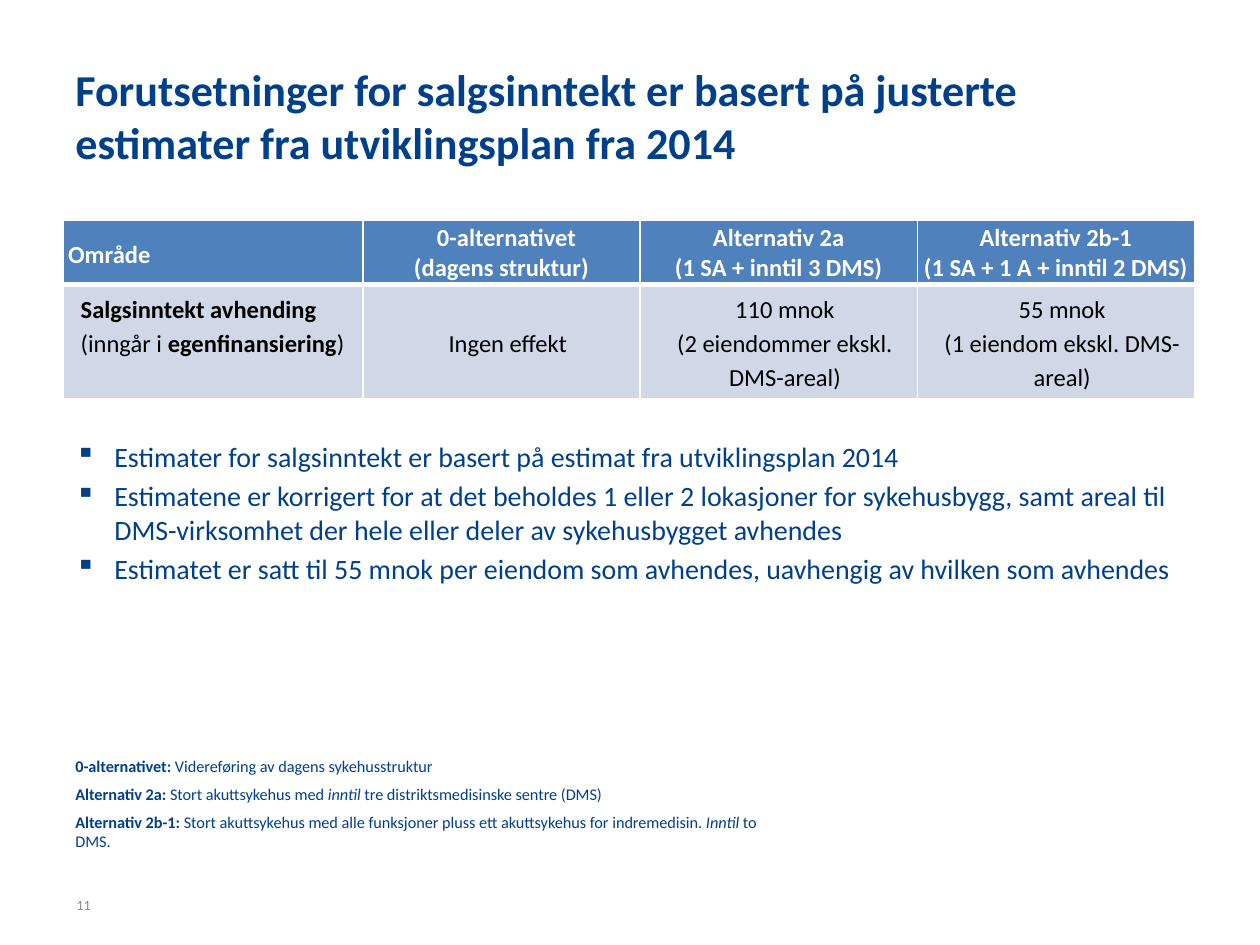
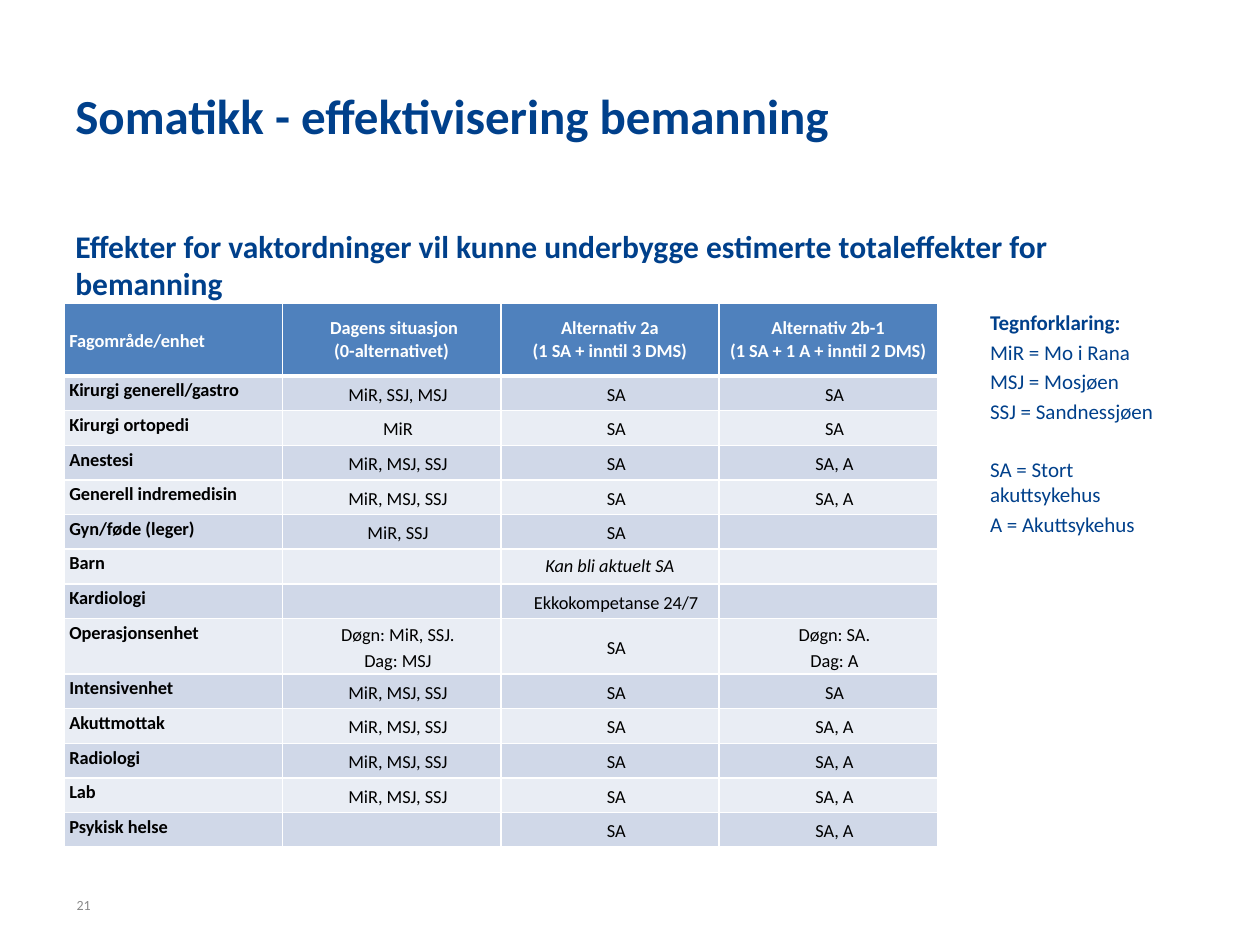
from dataclasses import dataclass, replace
from typing import NamedTuple

from lxml import etree
from pptx import Presentation
from pptx import util as u
from pptx.dml.color import RGBColor
from pptx.enum import text
from pptx.oxml import ns

COLORS = {
    "navy": "00408B",
    "gray": "898989",
    "header": "4F81BD",
    "band_dark": "D0D8E8",
    "band_light": "E9EDF4",
    "white": "FFFFFF",
    "black": "000000",
}
FONT = "Calibri"
COLUMN = u.Inches(0.5)
ROW = u.Inches(0.25)
LEFT, CENTER = text.PP_ALIGN.LEFT, text.PP_ALIGN.CENTER
TOP, MIDDLE = text.MSO_ANCHOR.TOP, text.MSO_ANCHOR.MIDDLE


class Area(NamedTuple):
    """A place on the grid, in columns and rows."""
    left: float
    top: float
    width: float
    height: float

    def emu(self) -> tuple[int, ...]:
        units = (COLUMN, ROW, COLUMN, ROW)
        return tuple(round(part * unit) for part, unit in zip(self, units))


class Run(NamedTuple):
    words: str
    bold: bool = False
    italic: bool = False


class Style(NamedTuple):
    size: float
    color: str = "navy"


@dataclass(frozen=True)
class Para:
    content: str | tuple[Run, ...]
    bold: bool = False
    italic: bool = False
    align: text.PP_ALIGN = LEFT
    indent: float = 0  # inches
    bullet: str = ""
    spacing: float = 1.0
    before: float = 0  # points
    after: float = 0


@dataclass(frozen=True)
class Grid:
    area: Area
    widths: list[float]
    heights: list[float]
    size: float
    header: list[list[Para]]
    body: list[list[list[Para]]]
    inset: tuple[float, float]  # body cells, inches
    label_inset: tuple[float, float]


TITLE = Area(1, 2.08, 18, 3.16)
PAGE_NUMBER = Area(1.02, 27.92, 4.66, 1.6)


def fill_paragraph(paragraph, para: Para, style: Style) -> None:
    properties = paragraph._p.get_or_add_pPr()
    if para.indent:
        properties.set("marL", str(u.Inches(para.indent)))
    if para.bullet:
        properties.set("indent", str(-u.Inches(para.indent)))
        mark = etree.SubElement(properties, ns.qn("a:buChar"))
        mark.set("char", para.bullet)
    paragraph.alignment = para.align
    paragraph.line_spacing = para.spacing
    paragraph.space_before = u.Pt(para.before)
    paragraph.space_after = u.Pt(para.after)
    font = paragraph.font
    font.name, font.size = FONT, u.Pt(style.size)
    font.color.rgb = RGBColor.from_string(COLORS[style.color])

    if isinstance(para.content, str):
        font.bold, font.italic = para.bold, para.italic
        if para.content:
            paragraph.add_run().text = para.content
        else:
            end = paragraph._p.get_or_add_endParaRPr()
            end.set("sz", str(round(style.size * 100)))
        return
    for part in para.content:
        run = paragraph.add_run()
        run.text = part.words
        run.font.bold, run.font.italic = part.bold, part.italic


def fill_frame(frame, paras: list[Para], style: Style) -> None:
    for index, para in enumerate(paras):
        paragraph = frame.add_paragraph() if index else frame.paragraphs[0]
        fill_paragraph(paragraph, para, style)


def add_text(slide, area: Area, paras: list[Para], style: Style, anchor=TOP) -> None:
    frame = slide.shapes.add_textbox(*area.emu()).text_frame
    frame.word_wrap = True
    frame.vertical_anchor = anchor
    fill_frame(frame, paras, style)


def add_border(cell, side: str, points: float) -> None:
    line = etree.SubElement(cell._tc.get_or_add_tcPr(), ns.qn(f"a:ln{side}"))
    line.set("w", str(u.Pt(points)))
    fill = etree.SubElement(line, ns.qn("a:solidFill"))
    etree.SubElement(fill, ns.qn("a:srgbClr")).set("val", COLORS["white"])


def format_cell(cell, row: int, inset: tuple[float, float], anchor) -> None:
    heavy_side = {0: "B", 1: "T"}.get(row)
    for side in "LRTB":
        add_border(cell, side, 3 if side == heavy_side else 1)
    band = "header" if row == 0 else "band_dark" if row % 2 else "band_light"
    cell.fill.solid()
    cell.fill.fore_color.rgb = RGBColor.from_string(COLORS[band])
    cell.margin_left = cell.margin_right = u.Inches(inset[0])
    cell.margin_top = cell.margin_bottom = u.Inches(inset[1])
    cell.vertical_anchor = anchor


def add_grid(slide, grid: Grid) -> None:
    rows = [grid.header, *grid.body]
    table = slide.shapes.add_table(
        len(rows), len(grid.widths), *grid.area.emu()).table
    for column, width in zip(table.columns, grid.widths):
        column.width = round(width * COLUMN)
    for table_row, height in zip(table.rows, grid.heights):
        table_row.height = round(height * ROW)
    for r, contents in enumerate(rows):
        for c, paras in enumerate(contents):
            cell = table.cell(r, c)
            if r == 0:
                inset, anchor = (0, 0.02 if c else 0), MIDDLE
            elif c == 0:
                inset, anchor = grid.label_inset, TOP
            else:
                inset, anchor = grid.inset, MIDDLE
            format_cell(cell, r, inset, anchor)
            fill_frame(cell.text_frame, paras,
                       Style(grid.size, "black" if r else "white"))


def header_cells(label: str, today: tuple[str, str], today_indent: float) -> list[list[Para]]:
    heading = Para("", bold=True, align=CENTER)
    options = [("Alternativ 2a", "(1 SA + inntil 3 DMS)"),
               ("Alternativ 2b-1", "(1 SA + 1 A + inntil 2 DMS)")]
    return [
        [Para(label, bold=True, indent=0.04, spacing=1.15)],
        [replace(heading, content=today[0], indent=today_indent),
         replace(heading, content=today[1])],
        *[[replace(heading, content=line) for line in option] for option in options],
    ]


def label_cell(*contents: str | tuple[Run, ...]) -> list[Para]:
    return [Para(content, bold=True, indent=0.04, spacing=1.15) for content in contents]


def value_cell(lines: str) -> list[Para]:
    return [Para(line, align=CENTER, indent=0.1, spacing=1.15)
            for line in lines.split("\n")]


def start_slide(deck, title: str, title_size: float, page: str):
    slide = deck.slides.add_slide(deck.slide_layouts[6])
    add_text(slide, TITLE, [Para(title, bold=True)], Style(title_size), MIDDLE)
    add_text(slide, PAGE_NUMBER, [Para(page)], Style(8, "gray"), MIDDLE)
    return slide


def spaced(paras: list[Para], before: float) -> list[Para]:
    """Put the same space before every paragraph but the first."""
    return paras[:1] + [replace(para, before=para.before or before) for para in paras[1:]]


def build_sales_income(deck) -> None:
    slide = start_slide(
        deck, "Forutsetninger for salgsinntekt er basert på justerte "
        "estimater fra utviklingsplan fra 2014", 25.2, "11")
    income = [
        label_cell("Salgsinntekt avhending",
                   (Run("(inngår i "), Run("egenfinansiering", bold=True), Run(")"))),
        value_cell("Ingen effekt"),
        value_cell("110 mnok\n(2 eiendommer ekskl. DMS-areal)"),
        value_cell("55 mnok\n(1 eiendom ekskl. DMS-areal)"),
    ]
    add_grid(slide, Grid(
        Area(1, 7, 17.96, 5.6), [4.76] + [4.4] * 3, [2, 3.6], 14,
        header_cells("Område", ("0-alternativet", "(dagens struktur)"), 0.08),
        [income], inset=(0.1, 0.05), label_inset=(0.1, 0.05)))

    assumptions = [
        "Estimater for salgsinntekt er basert på estimat fra utviklingsplan 2014",
        "Estimatene er korrigert for at det beholdes 1 eller 2 lokasjoner for sykehusbygg, "
        "samt areal til DMS-virksomhet der hele eller deler av sykehusbygget avhendes",
        "Estimatet er satt til 55 mnok per eiendom som avhendes, "
        "uavhengig av hvilken som avhendes",
    ]
    bullets = [Para(line, indent=0.31, bullet="▪") for line in assumptions]
    add_text(slide, Area(1, 13.76, 18, 9.6), spaced(bullets, 3.2), Style(16))

    alternatives = [
        (Run("0-alternativet: ", bold=True),
         Run("Videreføring av dagens sykehusstruktur")),
        (Run("Alternativ 2a: ", bold=True), Run("Stort akuttsykehus med "),
         Run("inntil", italic=True), Run(" tre distriktsmedisinske sentre (DMS)")),
        (Run("Alternativ 2b-1: ", bold=True),
         Run("Stort akuttsykehus med alle funksjoner pluss ett akuttsykehus "
             "for indremedisin. "),
         Run("Inntil", italic=True), Run(" to DMS.")),
    ]
    notes = [Para(runs, after=3) for runs in alternatives]
    add_text(slide, Area(1, 23.8, 11.68, 2.52), spaced(notes, 1.9), Style(9.3))


def build_staffing(deck) -> None:
    slide = start_slide(deck, "Somatikk - effektivisering bemanning", 28, "21")
    add_text(slide, Area(1, 7, 18, 2), [Para(
        "Effekter for vaktordninger vil kunne underbygge estimerte "
        "totaleffekter for bemanning", bold=True)], Style(18))

    everywhere = "MiR, MSJ, SSJ"
    units = [
        ("Kirurgi generell/gastro", "MiR, SSJ, MSJ", "SA", "SA"),
        ("Kirurgi ortopedi", "MiR", "SA", "SA"),
        ("Anestesi", everywhere, "SA", "SA, A"),
        ("Generell indremedisin", everywhere, "SA", "SA, A"),
        ("Gyn/føde (leger)", "MiR, SSJ", "SA", ""),
        ("Barn", "", "Kan bli aktuelt SA", ""),
        ("Kardiologi", "", "Ekkokompetanse 24/7", ""),
        ("Operasjonsenhet", "Døgn: MiR, SSJ.\nDag: MSJ", "SA", "Døgn: SA.\nDag: A"),
        ("Intensivenhet", everywhere, "SA", "SA"),
        ("Akuttmottak", everywhere, "SA", "SA, A"),
        ("Radiologi", everywhere, "SA", "SA, A"),
        ("Lab", everywhere, "SA", "SA, A"),
        ("Psykisk helse", "", "SA", "SA, A"),
    ]
    body = [[label_cell(unit), *map(value_cell, values)] for unit, *values in units]
    children = [unit for unit, *_ in units].index("Barn")
    body[children][2] = [Para("Kan bli aktuelt SA", italic=True, align=CENTER)]
    heights = [1.76 if "\n" in today else 1.1 for _, today, *_ in units]
    add_grid(slide, Grid(
        Area(1.02, 9.64, 13.86, 17.28), [3.465] * 4, [2.3, *heights], 10.5,
        header_cells("Fagområde/enhet", ("Dagens situasjon", "(0-alternativet)"), 0.04),
        body, inset=(0, 0.02), label_inset=(0, 0)))

    legend = [
        Para("Tegnforklaring:", bold=True),
        Para("MiR = Mo i Rana"),
        Para("MSJ = Mosjøen"),
        Para("SSJ = Sandnessjøen"),
        Para("SA = Stort akuttsykehus", before=19),
        Para("A = Akuttsykehus"),
    ]
    add_text(slide, Area(15.52, 9.64, 3.46, 16.76), spaced(legend, 2.4), Style(12))


def main() -> None:
    deck = Presentation()
    deck.slide_width, deck.slide_height = 20 * COLUMN, 30 * ROW
    build_sales_income(deck)
    build_staffing(deck)
    deck.save("out.pptx")


if __name__ == "__main__":
    main()
